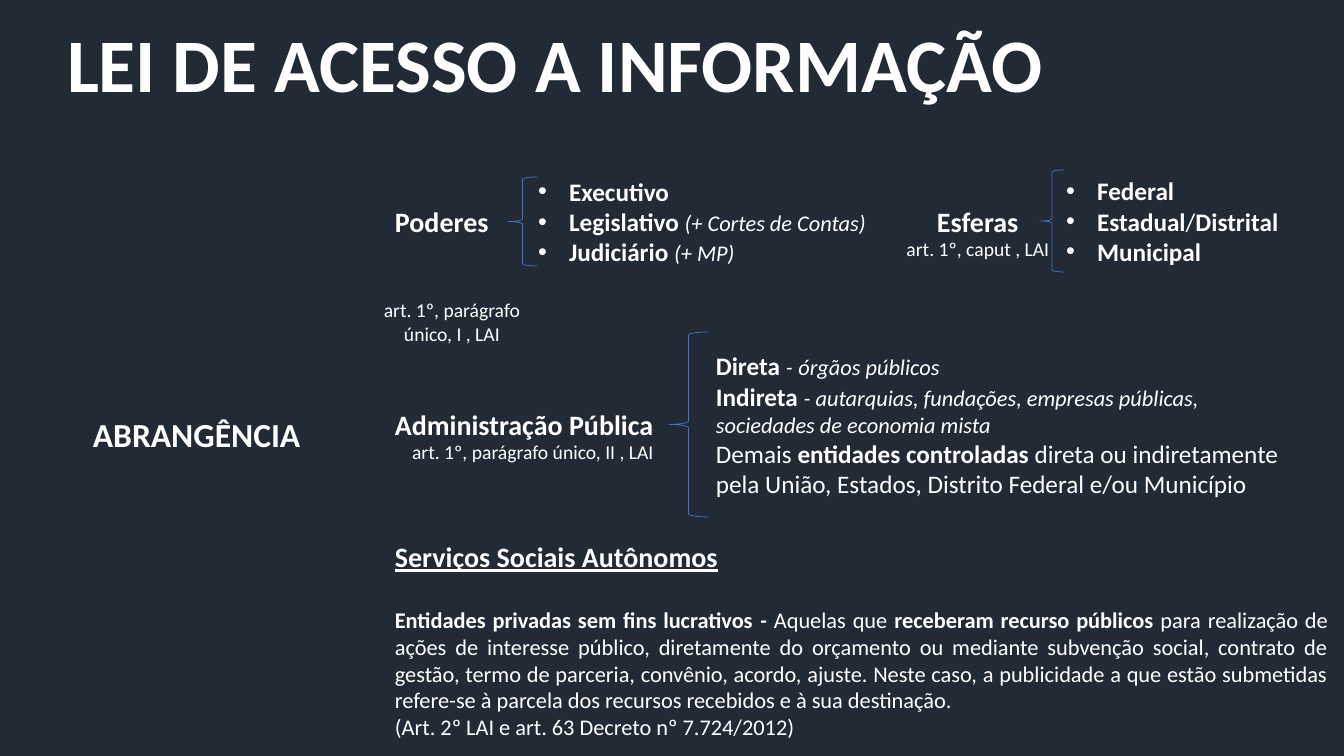
import pptx
import pptx.dml.color
import pptx.enum.shapes
import pptx.enum.text
import pptx.oxml
import pptx.oxml.ns
import pptx.util

COLORS = {"background": "222A35", "text": "FFFFFF", "brace": "4472C4"}
FONT = "Calibri"
PAGE_WIDTH, PAGE_HEIGHT = 1344, 756
PX = pptx.util.Inches(40 / 3) / PAGE_WIDTH
BULLET_INDENT = 31

ALIGN = pptx.enum.text.PP_ALIGN
ANCHOR = pptx.enum.text.MSO_ANCHOR


def px(length):
    return pptx.util.Emu(round(length * PX))


def color(name):
    return pptx.dml.color.RGBColor.from_string(COLORS[name])


def place(shape, box):
    shape.left, shape.top, shape.width, shape.height = map(px, box)


def add_bullet(para):
    properties = para._p.get_or_add_pPr()
    properties.set("marL", str(px(BULLET_INDENT)))
    properties.set("indent", str(-px(BULLET_INDENT)))
    bullet = pptx.oxml.parse_xml(
        f'<a:buChar {pptx.oxml.ns.nsdecls("a")} char="•"/>')
    properties.append(bullet)


def write_text(page, box, paragraphs, holder=None, size=18, align=ALIGN.LEFT,
               anchor=ANCHOR.TOP, spacing=1.0, bullets=False):
    """Fill a placeholder or new text box with paragraphs.

    A paragraph is a list of (text, style) or (text, style, size) runs;
    style letters are b, i and u.
    """
    if holder is None:
        holder = page.shapes.add_textbox(0, 0, 0, 0)
    place(holder, box)
    frame = holder.text_frame
    frame.word_wrap = True
    frame.auto_size = pptx.enum.text.MSO_AUTO_SIZE.NONE
    frame.vertical_anchor = anchor
    for index, runs in enumerate(paragraphs):
        para = frame.add_paragraph() if index else frame.paragraphs[0]
        para.alignment = align
        para.line_spacing = spacing
        para.space_before = para.space_after = pptx.util.Pt(0)
        if bullets:
            add_bullet(para)
        for text, style, *own_size in runs:
            span = para.add_run()
            span.text = text
            font = span.font
            font.name = FONT
            font.size = pptx.util.Pt(own_size[0] if own_size else size)
            font.bold = "b" in style
            font.italic = "i" in style
            font.underline = "u" in style
            font.color.rgb = color("text")


def add_brace(page, box):
    brace = page.shapes.add_shape(
        pptx.enum.shapes.MSO_SHAPE.LEFT_BRACE, *map(px, box))
    brace.shadow.inherit = False
    brace.fill.background()
    brace.line.color.rgb = color("brace")
    brace.line.width = pptx.util.Pt(0.5)


def add_branch(page, box, label, citation, details, brace_span, detail_offset,
               citation_box, holder=None):
    """Draw label, brace and details on one middle line, plus a citation.

    brace_span is the brace's offset and width; citation_box is relative to box.
    """
    left, top, width, height = box
    brace_offset, brace_width = brace_span
    write_text(page, (left, top, brace_offset, height), [[(label, "b")]],
               size=20, anchor=ANCHOR.MIDDLE)
    add_brace(page, (left + brace_offset, top, brace_width, height))
    write_text(page, (left + detail_offset, top, width - detail_offset, height),
               details, holder=holder, anchor=ANCHOR.MIDDLE,
               bullets=holder is not None)
    shift_x, shift_y, citation_width, citation_height = citation_box
    write_text(page, (left + shift_x, top + shift_y, citation_width, citation_height),
               [[(citation, "")]], size=14, align=ALIGN.CENTER)


def add_heading(page):
    write_text(page, (57, 11, 1264, 114), [[("LEI DE ACESSO A INFORMAÇÃO", "b")]],
               holder=page.shapes.title, size=54, anchor=ANCHOR.MIDDLE, spacing=0.9)
    write_text(page, (83, 409, 242, 50), [[("ABRANGÊNCIA", "b")]], size=24)


def add_branches(page):
    powers_holder, spheres_holder = list(page.placeholders)[1:3]
    add_branch(
        page, (385, 177, 507, 89), "Poderes", "art. 1º, parágrafo único, I , LAI",
        [[("Executivo", "b")],
         [("Legislativo ", "b"), ("(+ Cortes de Contas)", "i", 16)],
         [("Judiciário ", "b"), ("(+ MP)", "i", 16)]],
        brace_span=(123, 29), detail_offset=143,
        citation_box=(-13, 116, 160, 60), holder=powers_holder)
    add_branch(
        page, (927, 170, 363, 102), "Esferas", "art. 1º, caput , LAI",
        [[("Federal", "b")],
         [("Estadual", "b"), ("/", ""), ("Distrital", "b")],
         [("Municipal", "b")]],
        brace_span=(113, 24), detail_offset=129,
        citation_box=(-37, 62, 176, 34), holder=spheres_holder)
    add_branch(
        page, (385, 332, 923, 185), "Administração Pública",
        "art. 1º, parágrafo único, II , LAI",
        [[("Direta ", "b"), ("-", "i", 16), (" ", ""), ("órgãos públicos", "i", 16)],
         [("Indireta ", "b"),
          ("- autarquias, fundações, empresas públicas, "
           "sociedades de economia mista", "i", 16)],
         [("Demais ", ""), ("entidades controladas", "b"),
          (" direta ou indiretamente pela União, Estados, "
           "Distrito Federal e/ou Município", "")]],
        brace_span=(284, 39), detail_offset=321,
        citation_box=(-15, 103, 326, 34))


def add_private_entities(page, box):
    left, top, width, height = box
    heading_height = 66
    write_text(page, (left, top, width, heading_height),
               [[("Serviços Sociais Autônomos", "bu")]], size=20)
    write_text(
        page, (left, top + heading_height, width, height - heading_height),
        [[("Entidades privadas sem fins lucrativos ", "b"), ("- ", "bi"),
          ("Aquelas que ", ""), ("receberam recurso públicos ", "b"),
          ("para realização de ações de interesse público, diretamente do "
           "orçamento ou mediante subvenção social, contrato de gestão, termo de "
           "parceria, convênio, acordo, ajuste. Neste caso, a publicidade a que "
           "estão submetidas refere-se à parcela dos recursos recebidos e à sua "
           "destinação.", "")],
         [("(Art. 2º LAI e art. 63 Decreto nº 7.724/2012)", "")]],
        size=16, align=ALIGN.JUSTIFY)


def main():
    deck = pptx.Presentation()
    deck.slide_width, deck.slide_height = px(PAGE_WIDTH), px(PAGE_HEIGHT)
    two_content = deck.slide_layouts.get_by_name("Two Content")
    page = deck.slides.add_slide(two_content)
    page.background.fill.solid()
    page.background.fill.fore_color.rgb = color("background")
    add_heading(page)
    add_branches(page)
    add_private_entities(page, (385, 535, 953, 212))
    deck.save("out.pptx")


if __name__ == "__main__":
    main()
